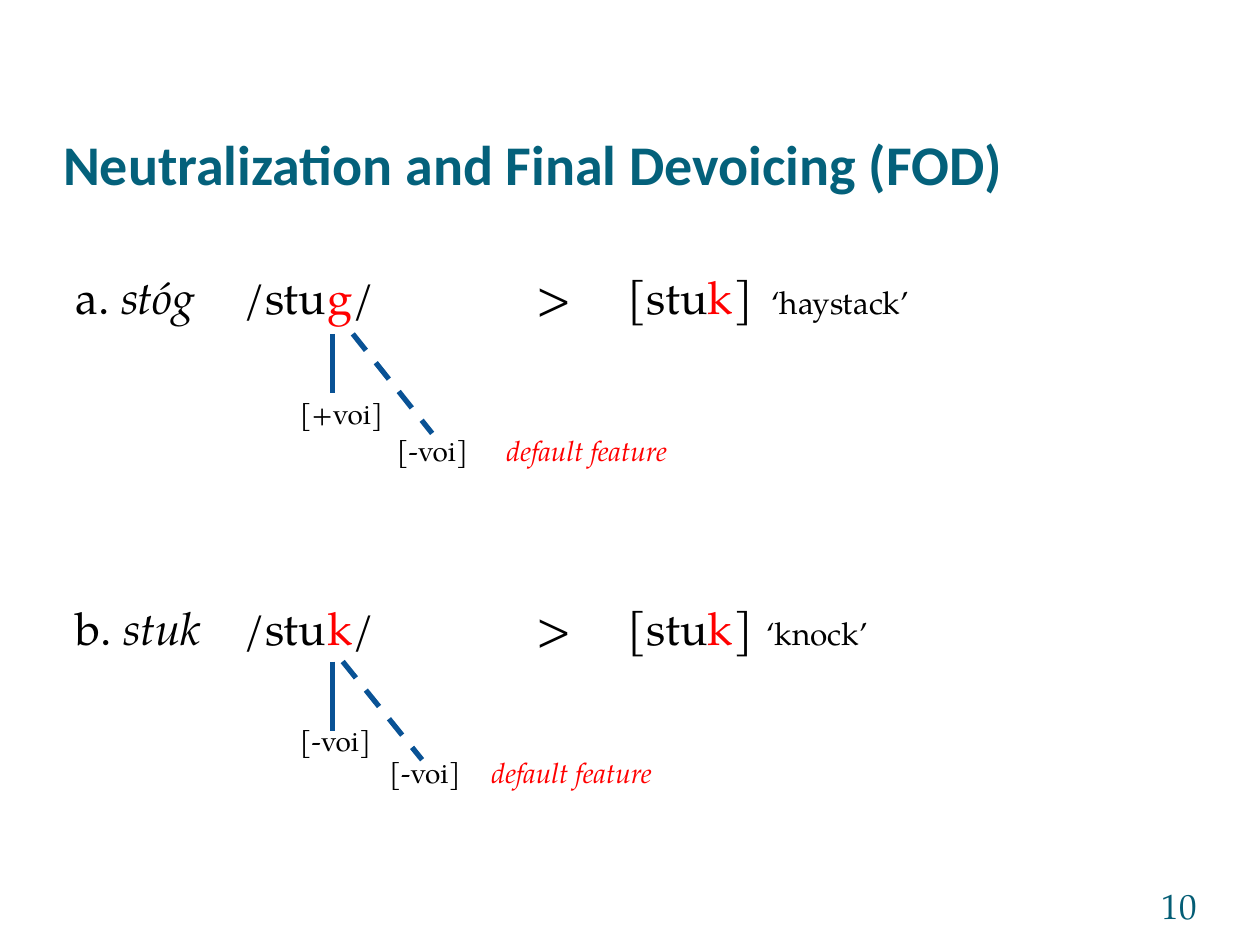
from lxml import etree
from pptx import Presentation
from pptx.dml.color import RGBColor
from pptx.enum.dml import MSO_LINE
from pptx.enum.shapes import MSO_CONNECTOR
from pptx.enum.text import MSO_ANCHOR, PP_ALIGN
from pptx.oxml.ns import qn
from pptx.util import Inches, Pt

STRAIGHT = MSO_CONNECTOR.STRAIGHT
DASH = MSO_LINE.DASH
BOTTOM, TOP = MSO_ANCHOR.BOTTOM, MSO_ANCHOR.TOP
LEFT, RIGHT = PP_ALIGN.LEFT, PP_ALIGN.RIGHT

TITLE_TEAL = RGBColor(0x04, 0x61, 0x7B)
NUMBER_TEAL = RGBColor(0x04, 0x5D, 0x75)
LINE_BLUE = RGBColor(0x09, 0x52, 0x95)
RED = RGBColor(0xFF, 0x00, 0x00)
BLACK = RGBColor(0x00, 0x00, 0x00)

HEAD_FONT, BODY_FONT = "Calibri", "TeX Gyre Pagella"
FORM, GLOSS, FEATURE = 26, 18, 16
ASCENT = 1.125  # height above the baseline, in ems

# Columns, in inches
LABEL_X, STEM_X, FINAL_X, ARROW_X, SURFACE_X = 0.6, 1.93, 2.6, 4.26, 4.98
VOICE_X, LINK_X = 2.38, 2.64


def format_frame(frame, anchor=TOP, wrap=False, top_inset=0):
    frame.margin_left = frame.margin_right = frame.margin_bottom = 0
    frame.margin_top = Inches(top_inset)
    frame.vertical_anchor = anchor
    frame.word_wrap = wrap


def add_run(paragraph, text, size=FORM, color=BLACK, font=BODY_FONT,
            bold=False, italic=False):
    run = paragraph.add_run()
    run.text = text
    run.font.size = Pt(size)
    run.font.name = font
    run.font.color.rgb = color
    run.font.bold = bold
    run.font.italic = italic


def set_tabs(paragraph, stops):
    tab_list = etree.SubElement(paragraph._p.get_or_add_pPr(), qn("a:tabLst"))
    for stop in stops:
        etree.SubElement(tab_list, qn("a:tab"), pos=str(Inches(stop)), algn="l")


def add_text_line(slide, left, baseline, width, size, runs, columns=()):
    """Place one line of (text, format) runs, with tabs at the given columns."""
    top = baseline - ASCENT * size / 72
    box = slide.shapes.add_textbox(Inches(left), Inches(top),
                                   Inches(width), Inches(1.4 * size / 72))
    format_frame(box.text_frame)
    paragraph = box.text_frame.paragraphs[0]
    if columns:
        set_tabs(paragraph, [column - left for column in columns])
    for text, style in runs:
        add_run(paragraph, text, **{"size": size, **style})


def add_link(slide, start, end, dashed=False):
    link = slide.shapes.add_connector(STRAIGHT, *map(Inches, start + end))
    link.line.color.rgb = LINE_BLUE
    link.line.width = Pt(3)
    if dashed:
        link.line.dash_style = DASH
    etree.SubElement(link._element.spPr, qn("a:effectLst"))


def add_title(slide, text):
    title = slide.shapes.title
    title.left, title.top = Inches(0.5), Inches(0.77)
    title.width, title.height = Inches(9), Inches(0.79)
    format_frame(title.text_frame, BOTTOM, wrap=True, top_inset=0.05)
    paragraph = title.text_frame.paragraphs[0]
    paragraph.alignment = LEFT
    add_run(paragraph, text, size=32, color=TITLE_TEAL, font=HEAD_FONT, bold=True)


def add_derivation(slide, label, word, final, gloss, gloss_x, baseline):
    runs = [(label, {}), (f" {word}", {"italic": True}), ("\t/stu\t", {}),
            (final, {"color": RED}), ("/\t>\t[stu", {}), ("k", {"color": RED}),
            ("]\t", {}), (gloss, {"size": GLOSS})]
    add_text_line(slide, LABEL_X, baseline, 7, FORM, runs,
                  (STEM_X, FINAL_X, ARROW_X, SURFACE_X, gloss_x))


def add_features(slide, voice, voice_base, default_x, note_x, default_base):
    add_text_line(slide, VOICE_X, voice_base, 0.7, FEATURE, [(voice, {})])
    add_text_line(slide, default_x, default_base, 2.2, FEATURE,
                  [("[-voi]\t", {}),
                   ("default feature", {"color": RED, "italic": True})], (note_x,))


def add_page_number(slide, number):
    box = slide.shapes.add_textbox(Inches(8.67), Inches(6.95),
                                   Inches(0.83), Inches(0.4))
    format_frame(box.text_frame, BOTTOM, wrap=True)
    paragraph = box.text_frame.paragraphs[0]
    paragraph.alignment = RIGHT
    add_run(paragraph, number, size=20, color=NUMBER_TEAL)


def main():
    deck = Presentation()
    deck.slide_width, deck.slide_height = Inches(10), Inches(7.5)
    slide = deck.slides.add_slide(deck.slide_layouts[5])
    add_title(slide, "Neutralization and Final Devoicing (FOD)")

    # a. voiced final consonant
    add_derivation(slide, "a.", "stóg", "g", "‘haystack’", 6.12, 2.54)
    add_features(slide, "[+voi]", 3.4, 3.15, 4.02, 3.69)
    add_link(slide, (LINK_X, 2.65), (LINK_X, 3.12))
    add_link(slide, (2.8, 2.65), (3.43, 3.44), dashed=True)

    # b. voiceless final consonant
    add_derivation(slide, "b.", "stuk", "k", "‘knock’", 6.08, 5.17)
    add_features(slide, "[-voi]", 5.99, 3.09, 3.9, 6.25)
    add_link(slide, (LINK_X, 5.25), (LINK_X, 5.8))
    add_link(slide, (2.72, 5.25), (3.35, 6.03), dashed=True)

    add_page_number(slide, "10")
    deck.save("out.pptx")


if __name__ == "__main__":
    main()
